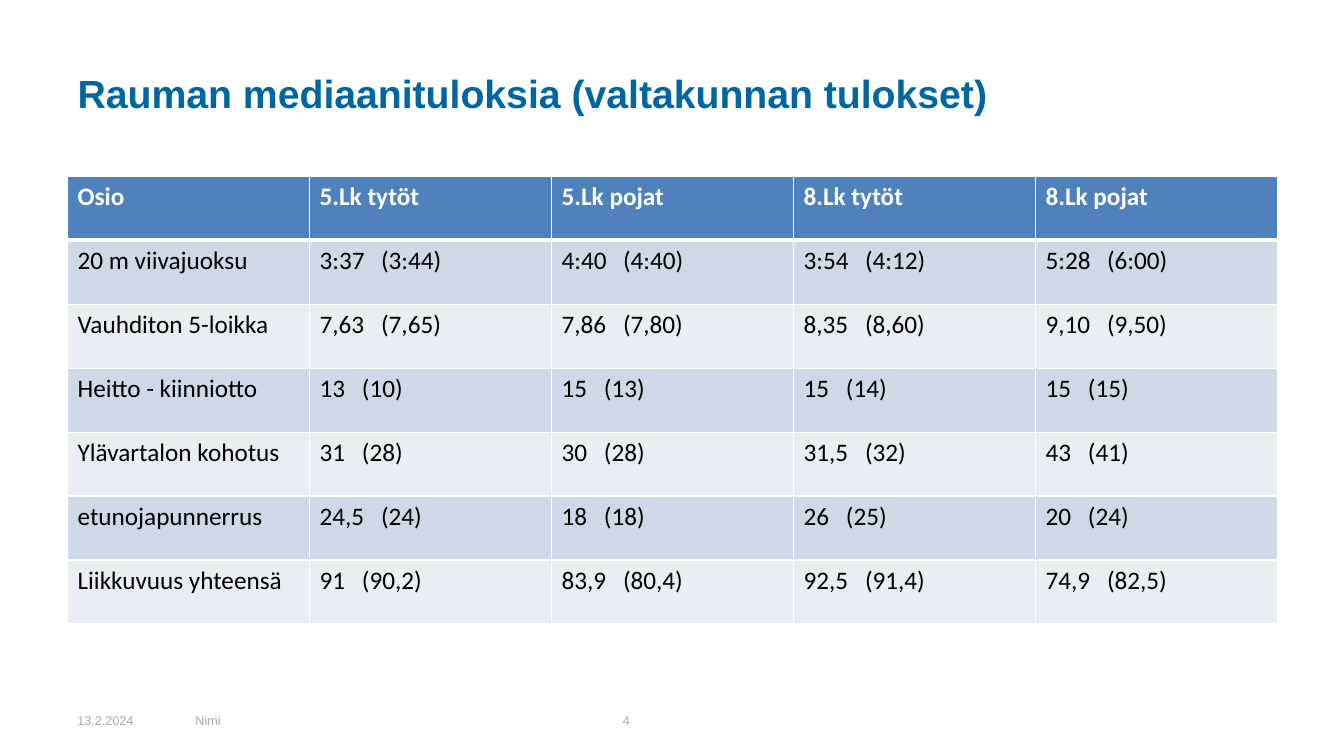
from lxml import etree
from pptx import Presentation
from pptx.dml.color import RGBColor
from pptx.enum.text import MSO_ANCHOR, PP_ALIGN
from pptx.oxml.ns import qn
from pptx.util import Pt

EMU_PER_PX = 9144  # 100 px to the inch
LEFT = PP_ALIGN.LEFT
MIDDLE = MSO_ANCHOR.MIDDLE
TITLE_ONLY = 5

WHITE, BLACK, GREY, TITLE_BLUE = "FFFFFF", "000000", "A6A6A6", "0066A1"
HEADER_FILL = "4F81BD"
BAND_FILLS = ("D0D8E8", "E9EDF4")

HEADERS = ("Osio", "5.Lk tytöt", "5.Lk pojat", "8.Lk tytöt", "8.Lk pojat")
# Each result is the local median and the national one.
RESULTS = (
    ("20 m viivajuoksu", ("3:37", "3:44"), ("4:40", "4:40"), ("3:54", "4:12"), ("5:28", "6:00")),
    ("Vauhditon 5-loikka", ("7,63", "7,65"), ("7,86", "7,80"), ("8,35", "8,60"), ("9,10", "9,50")),
    ("Heitto - kiinniotto", ("13", "10"), ("15", "13"), ("15", "14"), ("15", "15")),
    ("Ylävartalon kohotus", ("31", "28"), ("30", "28"), ("31,5", "32"), ("43", "41")),
    ("etunojapunnerrus", ("24,5", "24"), ("18", "18"), ("26", "25"), ("20", "24")),
    ("Liikkuvuus yhteensä", ("91", "90,2"), ("83,9", "80,4"), ("92,5", "91,4"), ("74,9", "82,5")),
)
TAB_STOPS = {2: 42, 4: 61}  # median length in characters -> px


def px(length):
    return length * EMU_PER_PX


def color(hex_string):
    return RGBColor.from_string(hex_string)


def add_run(paragraph, text, font_name, size, hex_color, bold=False):
    run = paragraph.add_run()
    run.text = text
    run.font.name = font_name
    run.font.size = Pt(size)
    run.font.bold = bold
    run.font.color.rgb = color(hex_color)


def add_tab_stop(paragraph, position):
    properties = paragraph._p.get_or_add_pPr()
    tabs = etree.SubElement(properties, qn("a:tabLst"))
    etree.SubElement(tabs, qn("a:tab"), pos=str(px(position)), algn="l")


def set_borders(cell, top, bottom):
    """Draw white borders, 1 pt at the sides and the given points above and below."""
    properties = cell._tc.get_or_add_tcPr()
    widths = {"a:lnL": 1, "a:lnR": 1, "a:lnT": top, "a:lnB": bottom}
    for index, (tag, width) in enumerate(widths.items()):
        line = etree.Element(qn(tag), w=str(Pt(width)))
        fill = etree.SubElement(line, qn("a:solidFill"))
        etree.SubElement(fill, qn("a:srgbClr"), val=WHITE)
        properties.insert(index, line)


def place_title(slide, left, top, width, height):
    title = slide.shapes.title
    title.left, title.top = px(left), px(top)
    title.width, title.height = px(width), px(height)
    title.text_frame.vertical_anchor = MIDDLE
    paragraph = title.text_frame.paragraphs[0]
    paragraph.alignment = LEFT
    add_run(paragraph, "Rauman mediaanituloksia (valtakunnan tulokset)", "Arial", 28, TITLE_BLUE, True)


def fill_cell(cell, content, row_index):
    is_header = row_index == 0
    cell.fill.solid()
    cell.fill.fore_color.rgb = color(HEADER_FILL if is_header else BAND_FILLS[(row_index - 1) % 2])
    set_borders(cell, 3 if row_index == 1 else 1, 3 if is_header else 1)
    paragraph = cell.text_frame.paragraphs[0]
    if isinstance(content, tuple):
        median, national = content
        add_tab_stop(paragraph, TAB_STOPS[len(median)])
        content = f"{median}\t({national})"
    add_run(paragraph, content, "Calibri", 18, WHITE if is_header else BLACK, is_header)


def add_results_table(slide, left, top, width, height):
    rows = (HEADERS, *RESULTS)
    frame = slide.shapes.add_table(len(rows), len(HEADERS), px(left), px(top), px(width), px(height))
    table = frame.table
    table.first_row = table.horz_banding = False
    for row_index, row in enumerate(rows):
        for column_index, content in enumerate(row):
            fill_cell(table.cell(row_index, column_index), content, row_index)


def add_footer(slide, left, top, height):
    """Place date, name and page number in a row, each as (offset, width, text)."""
    for offset, width, text in ((0, 117, "13.2.2024"), (117, 422, "Nimi"), (541, 311, "4")):
        box = slide.shapes.add_textbox(px(left + offset), px(top), px(width), px(height))
        box.text_frame.word_wrap = True
        box.text_frame.vertical_anchor = MIDDLE
        add_run(box.text_frame.paragraphs[0], text, "Arial", 9, GREY)


def main():
    presentation = Presentation()
    presentation.slide_width, presentation.slide_height = px(1333), px(750)
    slide = presentation.slides.add_slide(presentation.slide_layouts[TITLE_ONLY])
    place_title(slide, 67, 30, 1200, 125)
    add_results_table(slide, 67, 175, 1200, 444)
    add_footer(slide, 67, 695, 40)
    presentation.save("out.pptx")


if __name__ == "__main__":
    main()
